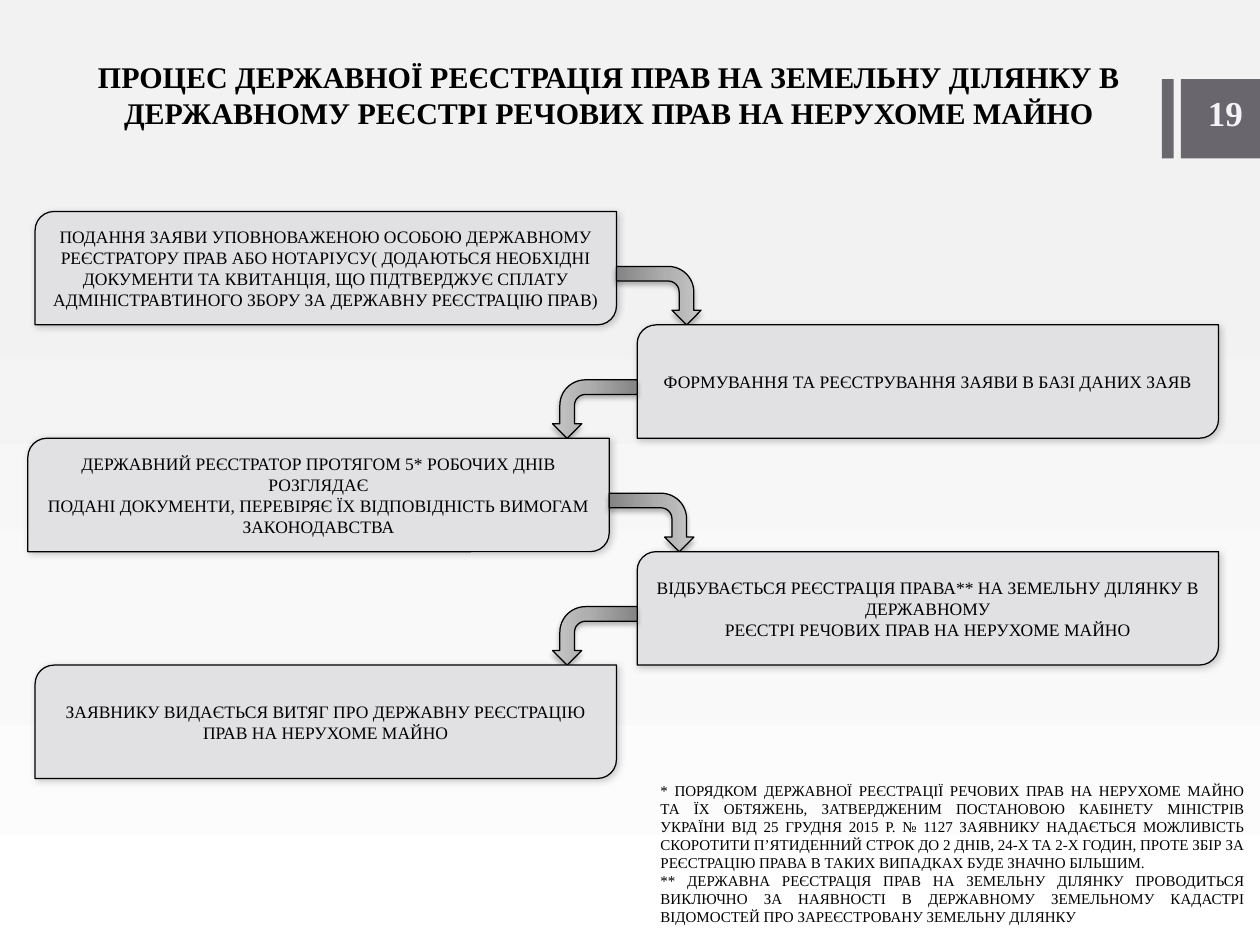
from lxml import etree
from pptx import Presentation
from pptx.dml.color import RGBColor
from pptx.enum import shapes, text
from pptx.oxml import ns
from pptx.util import Inches, Pt

FONT = "Times New Roman"
COLORS = {"black": "000000", "badge": "69676D", "badge_text": "F4F3F6", "box": "E1E0E2"}
BACKGROUND_STOPS = [(29, "F2F2F2"), (65, "F9F9F9"), (100, "FFFFFF")]
ARROW_STOPS = [(0, "C6C6C6"), (41, "AFAFAF"), (100, "848484")]

TITLE = [
    "ПРОЦЕС ДЕРЖАВНОЇ РЕЄСТРАЦІЯ ПРАВ НА ЗЕМЕЛЬНУ ДІЛЯНКУ В",
    "ДЕРЖАВНОМУ РЕЄСТРІ РЕЧОВИХ ПРАВ НА НЕРУХОМЕ МАЙНО",
]
# Left edge of each step in inches, and its paragraphs
STEPS = [
    (0.39, [
        "ПОДАННЯ ЗАЯВИ УПОВНОВАЖЕНОЮ ОСОБОЮ ДЕРЖАВНОМУ",
        "РЕЄСТРАТОРУ ПРАВ АБО НОТАРІУСУ( ДОДАЮТЬСЯ НЕОБХІДНІ",
        "ДОКУМЕНТИ ТА КВИТАНЦІЯ, ЩО ПІДТВЕРДЖУЄ СПЛАТУ",
        "АДМІНІСТРАВТИНОГО ЗБОРУ ЗА ДЕРЖАВНУ РЕЄСТРАЦІЮ ПРАВ)",
    ]),
    (7.08, ["ФОРМУВАННЯ ТА РЕЄСТРУВАННЯ ЗАЯВИ В БАЗІ ДАНИХ ЗАЯВ"]),
    (0.31, [
        "ДЕРЖАВНИЙ РЕЄСТРАТОР ПРОТЯГОМ 5* РОБОЧИХ ДНІВ РОЗГЛЯДАЄ",
        "ПОДАНІ ДОКУМЕНТИ, ПЕРЕВІРЯЄ ЇХ ВІДПОВІДНІСТЬ ВИМОГАМ",
        "ЗАКОНОДАВСТВА",
    ]),
    (7.08, [
        "ВІДБУВАЄТЬСЯ РЕЄСТРАЦІЯ ПРАВА** НА ЗЕМЕЛЬНУ ДІЛЯНКУ В ДЕРЖАВНОМУ",
        "РЕЄСТРІ РЕЧОВИХ ПРАВ НА НЕРУХОМЕ МАЙНО",
    ]),
    (0.39, ["ЗАЯВНИКУ ВИДАЄТЬСЯ ВИТЯГ ПРО ДЕРЖАВНУ РЕЄСТРАЦІЮ ПРАВ НА НЕРУХОМЕ МАЙНО"]),
]
NOTES = [
    "* ПОРЯДКОМ ДЕРЖАВНОЇ РЕЄСТРАЦІЇ РЕЧОВИХ ПРАВ НА НЕРУХОМЕ МАЙНО ТА ЇХ ОБТЯЖЕНЬ, "
    "ЗАТВЕРДЖЕНИМ ПОСТАНОВОЮ КАБІНЕТУ МІНІСТРІВ УКРАЇНИ ВІД 25 ГРУДНЯ 2015 Р. № 1127 "
    "ЗАЯВНИКУ НАДАЄТЬСЯ МОЖЛИВІСТЬ СКОРОТИТИ П’ЯТИДЕННИЙ СТРОК ДО 2 ДНІВ, 24-Х ТА 2-Х "
    "ГОДИН, ПРОТЕ ЗБІР ЗА РЕЄСТРАЦІЮ ПРАВА В ТАКИХ ВИПАДКАХ БУДЕ ЗНАЧНО БІЛЬШИМ.",
    "** ДЕРЖАВНА РЕЄСТРАЦІЯ ПРАВ НА ЗЕМЕЛЬНУ ДІЛЯНКУ ПРОВОДИТЬСЯ ВИКЛЮЧНО ЗА НАЯВНОСТІ В "
    "ДЕРЖАВНОМУ ЗЕМЕЛЬНОМУ КАДАСТРІ ВІДОМОСТЕЙ ПРО ЗАРЕЄСТРОВАНУ ЗЕМЕЛЬНУ ДІЛЯНКУ",
]


def rgb(name):
    return RGBColor.from_string(COLORS[name])


def set_gradient(fill, element, stops):
    """Give fill, which belongs to element, a top-to-bottom gradient."""
    fill.gradient()
    fill.gradient_angle = 270
    stop_list = element.find(".//" + ns.qn("a:gsLst"))
    for stop in list(stop_list):
        stop_list.remove(stop)
    for position, color in stops:
        stop = etree.SubElement(stop_list, ns.qn("a:gs"), pos=str(position * 1000))
        etree.SubElement(stop, ns.qn("a:srgbClr"), val=color)


def set_shadow(shape, opacity, blur, distance, angle):
    shape.shadow.inherit = False
    effects = shape.element.spPr.find(ns.qn("a:effectLst"))
    shadow = etree.SubElement(
        effects, ns.qn("a:outerShdw"), blurRad=str(Pt(blur)), dist=str(Pt(distance)),
        dir=str(angle * 60000), algn="ctr", rotWithShape="0")
    color = etree.SubElement(shadow, ns.qn("a:srgbClr"), val=COLORS["black"])
    etree.SubElement(color, ns.qn("a:alpha"), val=str(opacity * 1000))


def set_outline(shape):
    shape.line.color.rgb = rgb("black")
    shape.line.width = Pt(1)


def add_run(paragraph, words, size, color="black", bold=False):
    run = paragraph.add_run()
    run.text = words
    run.font.name = FONT
    run.font.size = Pt(size)
    run.font.bold = bold
    run.font.color.rgb = rgb(color)


def add_paragraphs(frame, lines, size, alignment):
    for index, line in enumerate(lines):
        paragraph = frame.add_paragraph() if index else frame.paragraphs[0]
        paragraph.alignment = alignment
        add_run(paragraph, line, size)


def set_wide_margins(frame):
    frame.margin_left = frame.margin_right = Inches(0.14)
    frame.margin_top = frame.margin_bottom = Inches(0.07)


def place_title(slide, left, top, width, height):
    title = slide.shapes.title
    title.left, title.top, title.width, title.height = left, top, width, height
    frame = title.text_frame
    frame.word_wrap = True
    frame.auto_size = text.MSO_AUTO_SIZE.NONE
    frame.vertical_anchor = text.MSO_ANCHOR.BOTTOM
    set_wide_margins(frame)
    paragraph = frame.paragraphs[0]
    paragraph.alignment = text.PP_ALIGN.CENTER
    for index, line in enumerate(TITLE):
        if index:
            paragraph.add_line_break()
        add_run(paragraph, line, 24, bold=True)


def add_page_badge(slide, left, top, width, height):
    """Add a thin bar and a block with the page number."""
    bar_width, gap = Inches(0.13), Inches(0.08)
    block_left = left + bar_width + gap
    for bar_left, part_width in ((left, bar_width), (block_left, width - bar_width - gap)):
        bar = slide.shapes.add_shape(
            shapes.MSO_SHAPE.RECTANGLE, bar_left, top, part_width, height)
        bar.shadow.inherit = False
        bar.fill.solid()
        bar.fill.fore_color.rgb = rgb("badge")
        bar.line.fill.background()
    number = slide.shapes.add_textbox(
        block_left + Inches(0.16), top + Inches(0.07), Inches(0.72), Inches(0.61))
    set_wide_margins(number.text_frame)
    add_run(number.text_frame.paragraphs[0], "19", 28, "badge_text", bold=True)


def add_step(slide, lines, left, top, width, height):
    box = slide.shapes.add_shape(
        shapes.MSO_SHAPE.ROUND_2_DIAG_RECTANGLE, left, top, width, height)
    box.fill.solid()
    box.fill.fore_color.rgb = rgb("box")
    set_outline(box)
    set_shadow(box, 20, 6, 1, 45)
    box.text_frame.vertical_anchor = text.MSO_ANCHOR.MIDDLE
    add_paragraphs(box.text_frame, lines, 14, text.PP_ALIGN.CENTER)


def add_bent_arrow(slide, start, bottom, to_right):
    """Add an arrow that leaves start sideways and turns down to bottom."""
    reach, drop = Inches(0.94), Inches(0.65)
    center_x = start + (reach if to_right else -reach) // 2
    center_y = bottom - drop // 2
    arrow = slide.shapes.add_shape(
        shapes.MSO_SHAPE.BENT_ARROW, center_x - drop // 2, center_y - reach // 2, drop, reach)
    arrow.rotation = 90 if to_right else 270
    if not to_right:
        arrow.element.spPr.find(ns.qn("a:xfrm")).set("flipH", "1")
    set_gradient(arrow.fill, arrow.element.spPr, ARROW_STOPS)
    set_outline(arrow)
    set_shadow(arrow, 28, 4, 3, 90)


def add_process(slide, top, width, step_height):
    """Add the steps as a zigzag, with an arrow from each to the next."""
    for index, (left, lines) in enumerate(STEPS):
        step_left, step_top = Inches(left), top + index * step_height
        add_step(slide, lines, step_left, step_top, width, step_height)
        if index < len(STEPS) - 1:
            to_right = index % 2 == 0
            start = step_left + width if to_right else step_left
            add_bent_arrow(slide, start, step_top + step_height, to_right)


def add_notes(slide, left, top, width, height):
    box = slide.shapes.add_textbox(left, top, width, height)
    box.text_frame.word_wrap = True
    add_paragraphs(box.text_frame, NOTES, 12, text.PP_ALIGN.JUSTIFY)


def main():
    presentation = Presentation()
    presentation.slide_width, presentation.slide_height = Inches(14), Inches(10.5)
    slide = presentation.slides.add_slide(presentation.slide_layouts[5])
    set_gradient(slide.background.fill, slide.element, BACKGROUND_STOPS)
    add_page_badge(slide, Inches(12.91), Inches(0.88), Inches(1.09), Inches(0.88))
    place_title(slide, Inches(0.71), Inches(0.34), Inches(12.11), Inches(1.18))
    add_process(slide, Inches(2.35), Inches(6.46), Inches(1.26))
    add_notes(slide, Inches(7.24), Inches(8.64), Inches(6.69), Inches(1.86))
    presentation.save("out.pptx")


if __name__ == "__main__":
    main()
